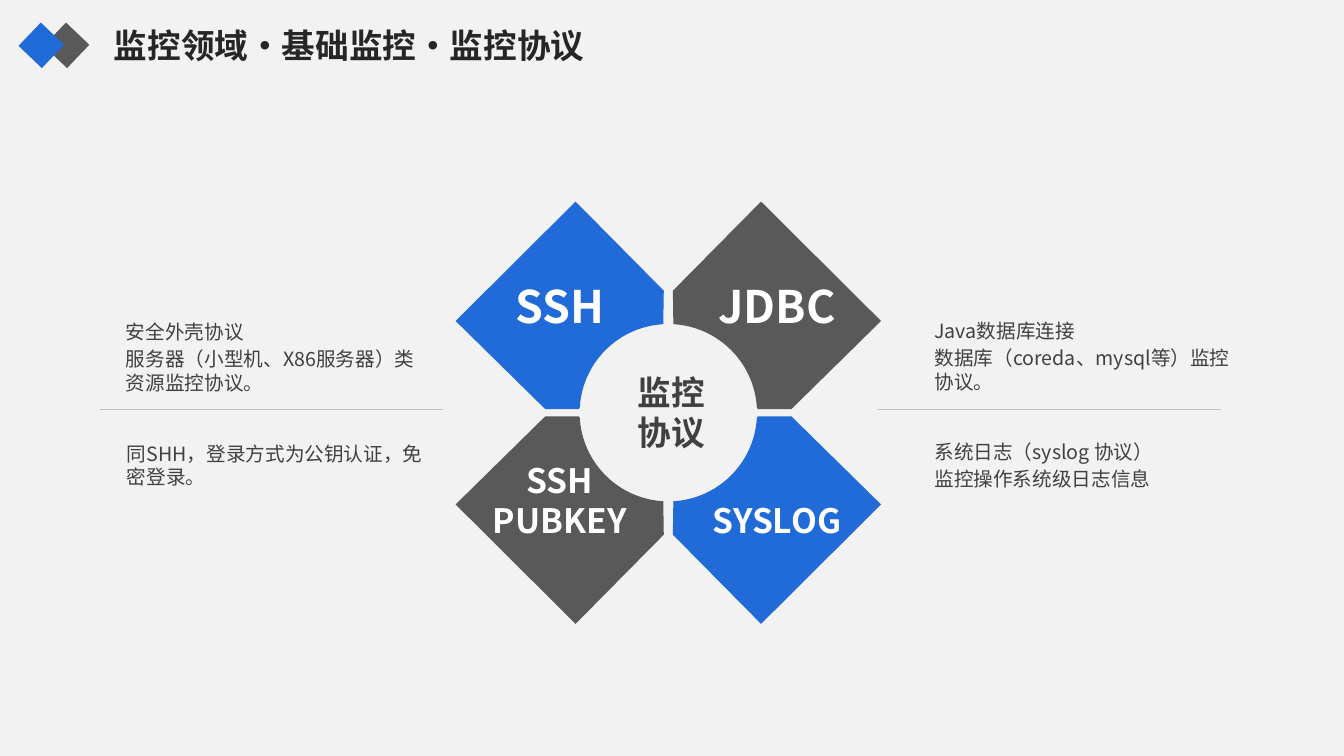
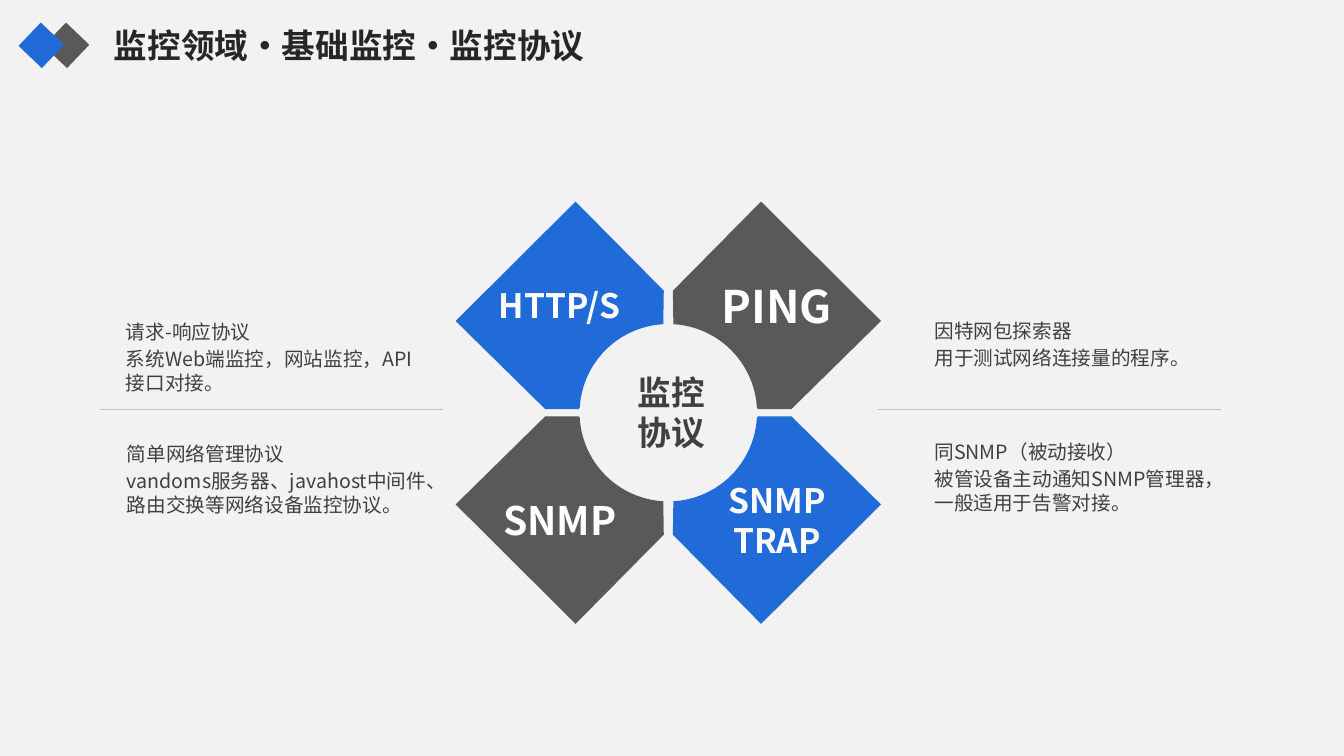
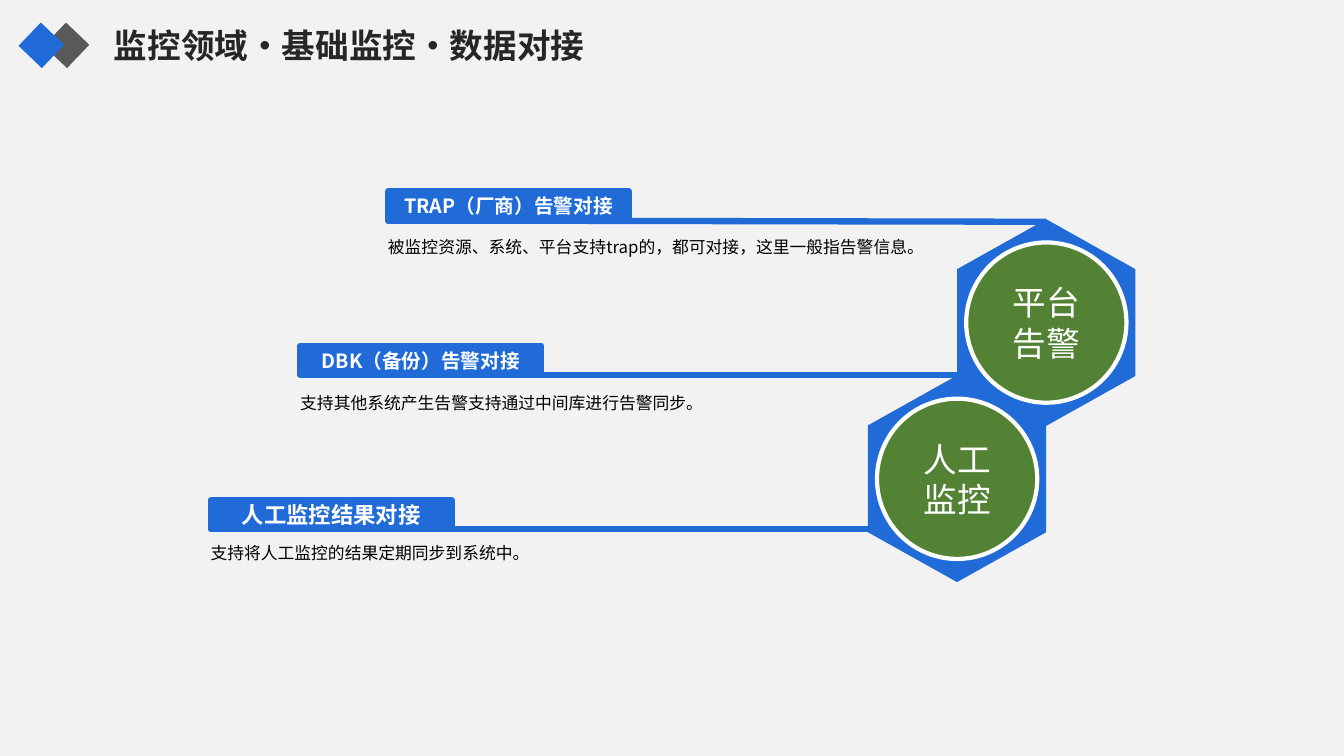
from dataclasses import dataclass
from math import asin, cos, pi, sin

from lxml.etree import SubElement
from pptx import Presentation
from pptx.dml.color import RGBColor
from pptx.enum.lang import MSO_LANGUAGE_ID
from pptx.enum.shapes import MSO_CONNECTOR, MSO_SHAPE
from pptx.enum.text import MSO_ANCHOR, MSO_AUTO_SIZE, PP_ALIGN
from pptx.oxml.ns import qn
from pptx.util import Inches, Pt

# Lengths are columns and rows of a square grid, ten cells to the inch.
COLUMNS, ROWS = 133.33, 75
FONT = "Noto Sans CJK SC"
BLUE, GRAY, GREEN = "206BD8", "595959", "548235"
WHITE, BLACK, PALE, RULE = "FFFFFF", "000000", "F2F2F2", "BFBFBF"
TITLE_INK, BODY_INK = "262626", "404040"

CENTER_COLUMN, CENTER_ROW = 66.3, 40.95
HUB_RADIUS = 8.8
HALF_GAP = 0.5
ARC_STEPS = 24
LABEL_WIDTH, LABEL_HEIGHT = 23.9, 2.9
HEXAGON_LENGTH, HEXAGON_BREADTH = 20.5, 17.7
DISC_SIZE = 15.9


@dataclass(frozen=True)
class Petal:
    name: tuple[str, ...]
    size: int
    note: tuple[str, ...]
    raised: float = 0


@dataclass(frozen=True)
class Quadrant:
    horizontal: int
    vertical: int
    color: str
    note_column: float
    note_row: float


@dataclass(frozen=True)
class Feed:
    label: str
    size: int
    note: str
    column: float
    row: float
    note_row: float
    line_end: tuple[float, float]


@dataclass(frozen=True)
class Badge:
    lines: tuple[str, ...]
    column: float
    row: float


QUADRANTS = (
    Quadrant(-1, -1, BLUE, 11.2, 31),
    Quadrant(1, -1, GRAY, 91.4, 30.9),
    Quadrant(-1, 1, GRAY, 11.3, 43.1),
    Quadrant(1, 1, BLUE, 91.4, 42.9),
)
PROTOCOL_SLIDES = (
    (
        Petal(("SSH",), 32, ("安全外壳协议", "服务器（小型机、X86服务器）类资源监控协议。")),
        Petal(("JDBC",), 32, ("Java数据库连接", "数据库（coreda、mysql等）监控协议。")),
        Petal(("SSH", "PUBKEY"), 24, ("同SHH，登录方式为公钥认证，免密登录。",), raised=4),
        Petal(("SYSLOG",), 24, ("系统日志（syslog 协议）", "监控操作系统级日志信息")),
    ),
    (
        Petal(("HTTP/S",), 24, ("请求-响应协议", "系统Web端监控，网站监控，API接口对接。")),
        Petal(("PING",), 32, ("因特网包探索器", "用于测试网络连接量的程序。")),
        Petal(("SNMP",), 28, ("简单网络管理协议", "vandoms服务器、javahost中间件、路由交换等网络设备监控协议。")),
        Petal(("SNMP", "TRAP"), 24, ("同SNMP（被动接收）", "被管设备主动通知SNMP管理器，一般适用于告警对接。")),
    ),
)
FEEDS = (
    Feed("TRAP（厂商）告警对接", 14, "被监控资源、系统、平台支持trap的，都可对接，这里一般指告警信息。",
         38.5, 19, 23, (103.8, 22)),
    Feed("DBK（备份）告警对接", 14, "支持其他系统产生告警支持通过中间库进行告警同步。",
         29.8, 34.3, 38.5, (95.1, 37.2)),
    Feed("人工监控结果对接", 16, "支持将人工监控的结果定期同步到系统中。",
         20.9, 49.6, 53.4, (86.2, 52.5)),
)
BADGES = (Badge(("平台", "告警"), 103.8, 32), Badge(("人工", "监控"), 94.95, 47.5))


def cells(count: float) -> int:
    return Inches(count / 10)


def rgb(color: str) -> RGBColor:
    return RGBColor.from_string(color)


def write(shape, lines, *, size, color, bold=False, align=PP_ALIGN.LEFT,
          anchor=MSO_ANCHOR.TOP, margins=(1, 0.5, 1, 0.5), gap=0):
    """Fill a shape with one paragraph per line; margins run left, top, right, bottom."""
    frame = shape.text_frame
    frame.word_wrap = True
    frame.auto_size = MSO_AUTO_SIZE.NONE
    frame.vertical_anchor = anchor
    (frame.margin_left, frame.margin_top,
     frame.margin_right, frame.margin_bottom) = map(cells, margins)
    for index, line in enumerate(lines):
        paragraph = frame.add_paragraph() if index else frame.paragraphs[0]
        paragraph.alignment = align
        if index and gap:
            paragraph.space_before = Pt(gap)
        run = paragraph.add_run()
        run.text = line
        run.font.size, run.font.bold, run.font.name = Pt(size), bold, FONT
        run.font.color.rgb = rgb(color)
        run.font.language_id = MSO_LANGUAGE_ID.SIMPLIFIED_CHINESE
        SubElement(run.font._element, qn("a:ea"), typeface=FONT)


def add_text(slide, column: float, row: float, width: float, height: float, lines, **text_format):
    box = slide.shapes.add_textbox(*map(cells, (column, row, width, height)))
    write(box, lines, **text_format)


def paint(shape, fill: str, line: str = "", line_width: float = 0):
    shape.shadow.inherit = False
    shape.fill.solid()
    shape.fill.fore_color.rgb = rgb(fill)
    if line:
        shape.line.color.rgb = rgb(line)
        shape.line.width = Pt(line_width)
    else:
        shape.line.fill.background()


def add_shape(slide, kind, column: float, row: float, width: float, height: float,
              fill: str, line: str = "", line_width: float = 0):
    shape = slide.shapes.add_shape(kind, *map(cells, (column, row, width, height)))
    paint(shape, fill, line, line_width)
    return shape


def add_line(slide, start: tuple[float, float], end: tuple[float, float], color: str, width: float):
    line = slide.shapes.add_connector(MSO_CONNECTOR.STRAIGHT, *map(cells, start + end))
    line.line.color.rgb = rgb(color)
    line.line.width = Pt(width)
    SubElement(line._element.spPr, qn("a:effectLst"))


def start_slide(presentation, title_text: str):
    """Add a slide with the shared title and its pair of diamonds."""
    slide = presentation.slides.add_slide(presentation.slide_layouts[5])
    title = slide.shapes.title
    title.left, title.top, title.width, title.height = map(cells, (10.3, 2, 73.8, 5))
    write(title, (title_text,), size=24, color=TITLE_INK, bold=True)
    for column, color in ((5, GRAY), (2.5, BLUE)):
        add_shape(slide, MSO_SHAPE.RECTANGLE, column, 2.9, 3.2, 3.2, color).rotation = 43.7
    return slide


def petal_outline(quadrant: Quadrant) -> list[tuple[int, int]]:
    """Trace a diamond whose inner corner is cut by the round hub."""
    first = asin(HALF_GAP / HUB_RADIUS)
    step = (pi / 2 - 2 * first) / ARC_STEPS
    angles = [first + step * index for index in range(ARC_STEPS + 1)]
    arc = [(HUB_RADIUS * sin(angle), HUB_RADIUS * cos(angle)) for angle in angles]
    offsets = [(9.2, 20.95), (0.45, 12.1), *arc, (8.9, 0.35), (12.2, 0.35), (21.1, 9.1)]
    return [(cells(CENTER_COLUMN + quadrant.horizontal * across),
             cells(CENTER_ROW + quadrant.vertical * down)) for across, down in offsets]


def add_petal(slide, quadrant: Quadrant, petal: Petal):
    start, *others = petal_outline(quadrant)
    builder = slide.shapes.build_freeform(*start)
    builder.add_line_segments(others)
    shape = builder.convert_to_shape()
    paint(shape, quadrant.color)
    write(shape, petal.name, size=petal.size, color=WHITE, bold=True, align=PP_ALIGN.CENTER,
          anchor=MSO_ANCHOR.MIDDLE, margins=(1, 0.5, 1, 0.5 + petal.raised))
    add_text(slide, quadrant.note_column, quadrant.note_row, 32.7, 9, petal.note,
             size=14, color=BODY_INK, margins=(1.3, 0.7, 1.3, 0.7), gap=2.8)


def add_protocol_slide(presentation, petals: tuple[Petal, ...]):
    slide = start_slide(presentation, "监控领域·基础监控·监控协议")
    for quadrant, petal in zip(QUADRANTS, petals):
        add_petal(slide, quadrant, petal)
    add_text(slide, 62.3, 36.4, 11.8, 9.1, ("监控", "协议"), size=24, color=BODY_INK, bold=True)
    for column in (9.9, 87.1):
        add_line(slide, (column, 40.6), (column + 34.05, 40.6), RULE, 0.5)


def add_feed(slide, feed: Feed):
    add_line(slide, (feed.column + 13.9, feed.row + LABEL_HEIGHT), feed.line_end, BLUE, 4.5)
    label = add_shape(slide, MSO_SHAPE.RECTANGLE, feed.column, feed.row,
                      LABEL_WIDTH, LABEL_HEIGHT, BLUE, BLUE, 4.5)
    write(label, (feed.label,), size=feed.size, color=WHITE, bold=True,
          align=PP_ALIGN.CENTER, anchor=MSO_ANCHOR.MIDDLE)
    add_text(slide, feed.column - 1, feed.note_row, 63.5, 5, (feed.note,), size=12, color=BLACK)


def add_badge(slide, badge: Badge):
    """Draw a hexagon and its disc around the badge's centre."""
    hexagon = add_shape(slide, MSO_SHAPE.HEXAGON, badge.column - HEXAGON_LENGTH / 2,
                        badge.row - HEXAGON_BREADTH / 2, HEXAGON_LENGTH, HEXAGON_BREADTH, BLUE)
    hexagon.adjustments[0] = 0.28
    hexagon.rotation = 270
    disc = add_shape(slide, MSO_SHAPE.OVAL, badge.column - DISC_SIZE / 2,
                     badge.row - DISC_SIZE / 2, DISC_SIZE, DISC_SIZE, GREEN, WHITE, 3)
    write(disc, badge.lines, size=24, color=WHITE, align=PP_ALIGN.CENTER, anchor=MSO_ANCHOR.MIDDLE)


def add_feed_slide(presentation):
    slide = start_slide(presentation, "监控领域·基础监控·数据对接")
    for feed in FEEDS:
        add_feed(slide, feed)
    for badge in BADGES:
        add_badge(slide, badge)


def main():
    presentation = Presentation()
    presentation.slide_width, presentation.slide_height = cells(COLUMNS), cells(ROWS)
    background = presentation.slide_master.background.fill
    background.solid()
    background.fore_color.rgb = rgb(PALE)
    for petals in PROTOCOL_SLIDES:
        add_protocol_slide(presentation, petals)
    add_feed_slide(presentation)
    presentation.save("out.pptx")


if __name__ == "__main__":
    main()
